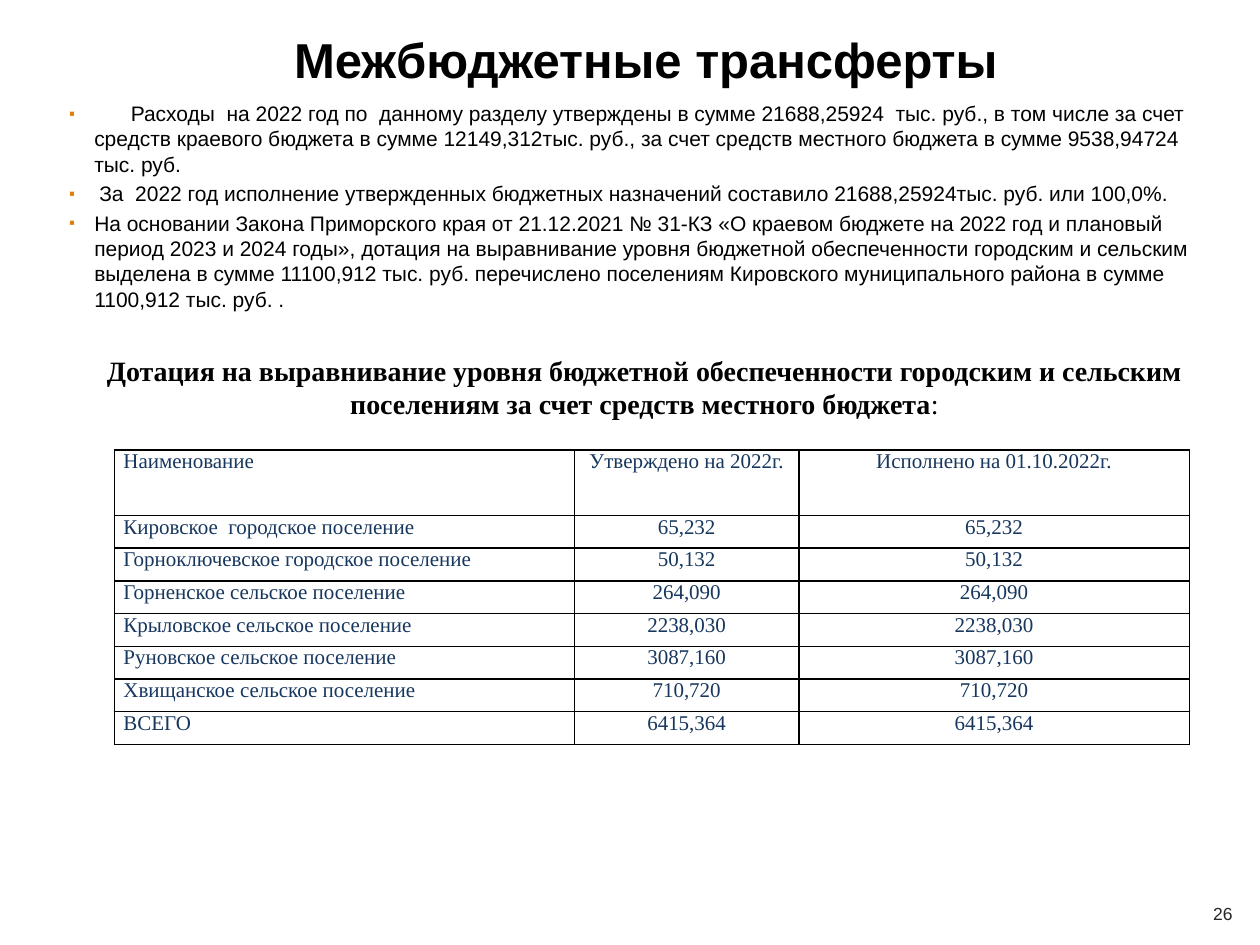
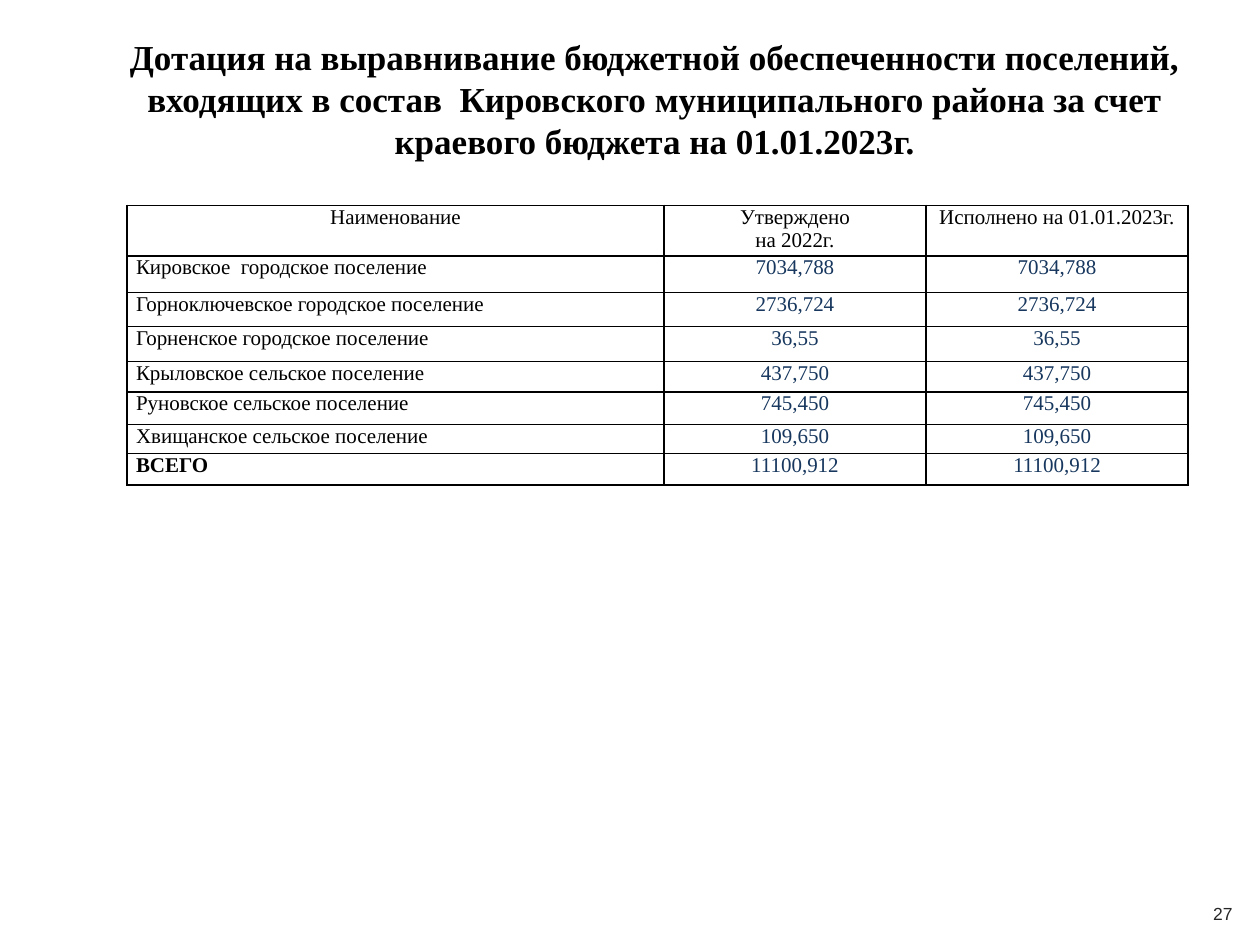
"""Build two slides on budget transfers to settlements."""
from dataclasses import dataclass
from typing import Any

from lxml.etree import SubElement as Sub
from pptx import Presentation as Deck
from pptx.dml.color import RGBColor as Rgb
from pptx.enum.text import MSO_ANCHOR as Anchor, PP_ALIGN as Align
from pptx.oxml.ns import qn
from pptx.util import Emu, Inches, Pt

INK = {"black": "000000", "navy": "17375E", "grey": "262626", "mark": "DD7E0E"}
SANS, SERIF = "Arial", "Times New Roman"
WIDE, HIGH = Inches(10), Inches(7.5)
COLS, ROWS = 100, 75
EDGES = ("a:lnL", "a:lnR", "a:lnT", "a:lnB")


@dataclass(frozen=True)
class Style:
    font: str
    size: float
    ink: str = "black"
    bold: bool = False


@dataclass(frozen=True)
class Area:
    left: float
    top: float
    width: float
    height: float


@dataclass(frozen=True)
class Line:
    runs: tuple[tuple[str, Style], ...]
    align: Any = Align.LEFT
    gap: float = 0
    hang: float = 0
    tab: float = 0


@dataclass(frozen=True)
class Grid:
    area: Area
    cols: tuple[float, ...]
    rows: tuple[float, ...]
    heads: tuple[str, ...]
    head: Style
    first: Align
    name: Style
    total: Style
    data: tuple[tuple[str, str], ...]


BODY = Style(SANS, 12)
CELL = Style(SERIF, 12)
NAVY = Style(SERIF, 12, "navy")
PAGE = Style(SANS, 10, "grey")
FOOT = Area(94.5, 70.5, 5.1, 4)


def across(cols: float) -> Emu:
    return Emu(round(WIDE * cols / COLS))


def down(rows: float) -> Emu:
    return Emu(round(HIGH * rows / ROWS))


def place(area: Area) -> tuple[Emu, Emu, Emu, Emu]:
    return across(area.left), down(area.top), across(area.width), down(area.height)


def mark(para: Any, line: Line) -> None:
    props = para._p.get_or_add_pPr()
    props.set("marL", str(across(line.hang)))
    props.set("indent", str(-across(line.hang)))
    tint = Sub(props, qn("a:buClr"))
    Sub(tint, qn("a:srgbClr"), val=INK["mark"])
    Sub(props, qn("a:buSzPct"), val="80000")
    Sub(props, qn("a:buFont"), typeface=SANS)
    Sub(props, qn("a:buChar"), char="▪")
    if line.tab:
        stops = Sub(props, qn("a:tabLst"))
        Sub(stops, qn("a:tab"), pos=str(across(line.tab)), algn="l")


def write(frame: Any, lines: list[Line]) -> None:
    for i, line in enumerate(lines):
        para = frame.add_paragraph() if i else frame.paragraphs[0]
        para.alignment = line.align
        if line.hang:
            mark(para, line)
        if line.gap:
            para.space_before = Pt(line.gap)
        for text, style in line.runs:
            run = para.add_run()
            run.text = text
            font = run.font
            font.name, font.size, font.bold = style.font, Pt(style.size), style.bold
            font.color.rgb = Rgb.from_string(INK[style.ink])


def add_text(slide: Any, area: Area, lines: list[Line], anchor: Any = Anchor.MIDDLE) -> None:
    frame = slide.shapes.add_textbox(*place(area)).text_frame
    frame.word_wrap = True
    frame.vertical_anchor = anchor
    write(frame, lines)


def add_page(deck: Any, area: Area, title: str, style: Style, page: int) -> Any:
    slide = deck.slides.add_slide(deck.slide_layouts[6])
    add_text(slide, area, [Line(((title, style),), Align.CENTER)])
    add_text(slide, FOOT, [Line(((str(page), PAGE),), Align.CENTER)])
    return slide


def fill_cell(cell: Any, text: str, style: Style, align: Any) -> None:
    cell.margin_left = cell.margin_right = across(0.7)
    cell.margin_top = cell.margin_bottom = 0
    props = cell._tc.get_or_add_tcPr()
    for edge in EDGES:
        rule = Sub(props, qn(edge), w=str(Pt(1)))
        paint = Sub(rule, qn("a:solidFill"))
        Sub(paint, qn("a:srgbClr"), val=INK["black"])
    cell.fill.background()
    write(cell.text_frame, [Line(((part, style),), align) for part in text.split("\n")])


def add_grid(slide: Any, grid: Grid) -> None:
    table = slide.shapes.add_table(len(grid.rows), len(grid.cols), *place(grid.area)).table
    table.first_row = table.horz_banding = False
    for col, width in zip(table.columns, grid.cols):
        col.width = across(width)
    for row, height in zip(table.rows, grid.rows):
        row.height = down(height)
    for j, text in enumerate(grid.heads):
        fill_cell(table.cell(0, j), text, grid.head, Align.CENTER if j else grid.first)
    for i, (name, value) in enumerate(grid.data, 1):
        style = grid.total if i == len(grid.data) else grid.name
        fill_cell(table.cell(i, 0), name, style, Align.LEFT)
        for j in (1, 2):
            fill_cell(table.cell(i, j), value, NAVY, Align.CENTER)


LOCAL = Grid(
    Area(9.1, 35.7, 85.3, 23.4), (36.5, 17.8, 31), (5.2,) + (2.6,) * 7,
    ("Наименование", "Утверждено на 2022г.", "Исполнено на 01.10.2022г."),
    NAVY, Align.LEFT, NAVY, NAVY,
    (
        ("Кировское  городское поселение", "65,232"),
        ("Горноключевское городское поселение", "50,132"),
        ("Горненское сельское поселение", "264,090"),
        ("Крыловское сельское поселение", "2238,030"),
        ("Руновское сельское поселение", "3087,160"),
        ("Хвищанское сельское поселение", "710,720"),
        ("ВСЕГО", "6415,364"),
    ),
)
STATE = Grid(
    Area(10.1, 16.3, 84.2, 21.9), (42.6, 20.8, 20.8),
    (3.7, 2.9, 2.7, 2.8, 2.4, 2.6, 2.3, 2.5),
    ("Наименование", "Утверждено\nна 2022г.", "Исполнено на 01.01.2023г."),
    CELL, Align.CENTER, CELL, Style(SERIF, 12, bold=True),
    (
        ("Кировское  городское поселение", "7034,788"),
        ("Горноключевское городское поселение", "2736,724"),
        ("Горненское городское поселение", "36,55"),
        ("Крыловское сельское поселение", "437,750"),
        ("Руновское сельское поселение", "745,450"),
        ("Хвищанское сельское поселение", "109,650"),
        ("ВСЕГО", "11100,912"),
    ),
)
NOTES = [
    Line((("\tРасходы  на 2022 год по  данному разделу утверждены в сумме 21688,25924  тыс. руб., "
           "в том числе за счет средств краевого бюджета в сумме 12149,312тыс. руб., "
           "за счет средств местного бюджета в сумме 9538,94724 тыс. руб.", BODY),),
         hang=2, tab=4.9),
    Line((("За  2022 год исполнение утвержденных бюджетных назначений составило "
           "21688,25924тыс. руб. или 100,0%.", BODY),), gap=2.6, hang=2.4),
    Line((("На основании Закона Приморского края от 21.12.2021 № 31-КЗ «О краевом бюджете "
           "на 2022 год и плановый период 2023 и 2024 годы», дотация на выравнивание уровня "
           "бюджетной обеспеченности городским и сельским выделена в сумме 11100,912 тыс. руб. "
           "перечислено поселениям Кировского муниципального района в сумме "
           "1100,912 тыс. руб. .", BODY),), gap=2.6, hang=2),
    Line((("Дотация на выравнивание уровня бюджетной обеспеченности городским и сельским "
           "поселениям за счет средств местного бюджета", Style(SERIF, 16, bold=True)),
          (":", Style(SERIF, 16))), Align.CENTER, gap=24),
]


def main() -> None:
    deck = Deck()
    deck.slide_width, deck.slide_height = WIDE, HIGH
    slide = add_page(deck, Area(5, 1.8, 92.5, 5.7), "Межбюджетные трансферты",
                     Style(SANS, 28, bold=True), 26)
    add_text(slide, Area(4.5, 7.5, 93.3, 34.4), NOTES, Anchor.TOP)
    add_grid(slide, LOCAL)
    slide = add_page(deck, Area(6.4, 4.2, 91.1, 7.2),
                     "Дотация на выравнивание бюджетной обеспеченности поселений, "
                     "входящих в состав  Кировского муниципального района "
                     "за счет краевого бюджета на 01.01.2023г.",
                     Style(SERIF, 20, bold=True), 27)
    add_grid(slide, STATE)
    deck.save("out.pptx")


if __name__ == "__main__":
    main()
